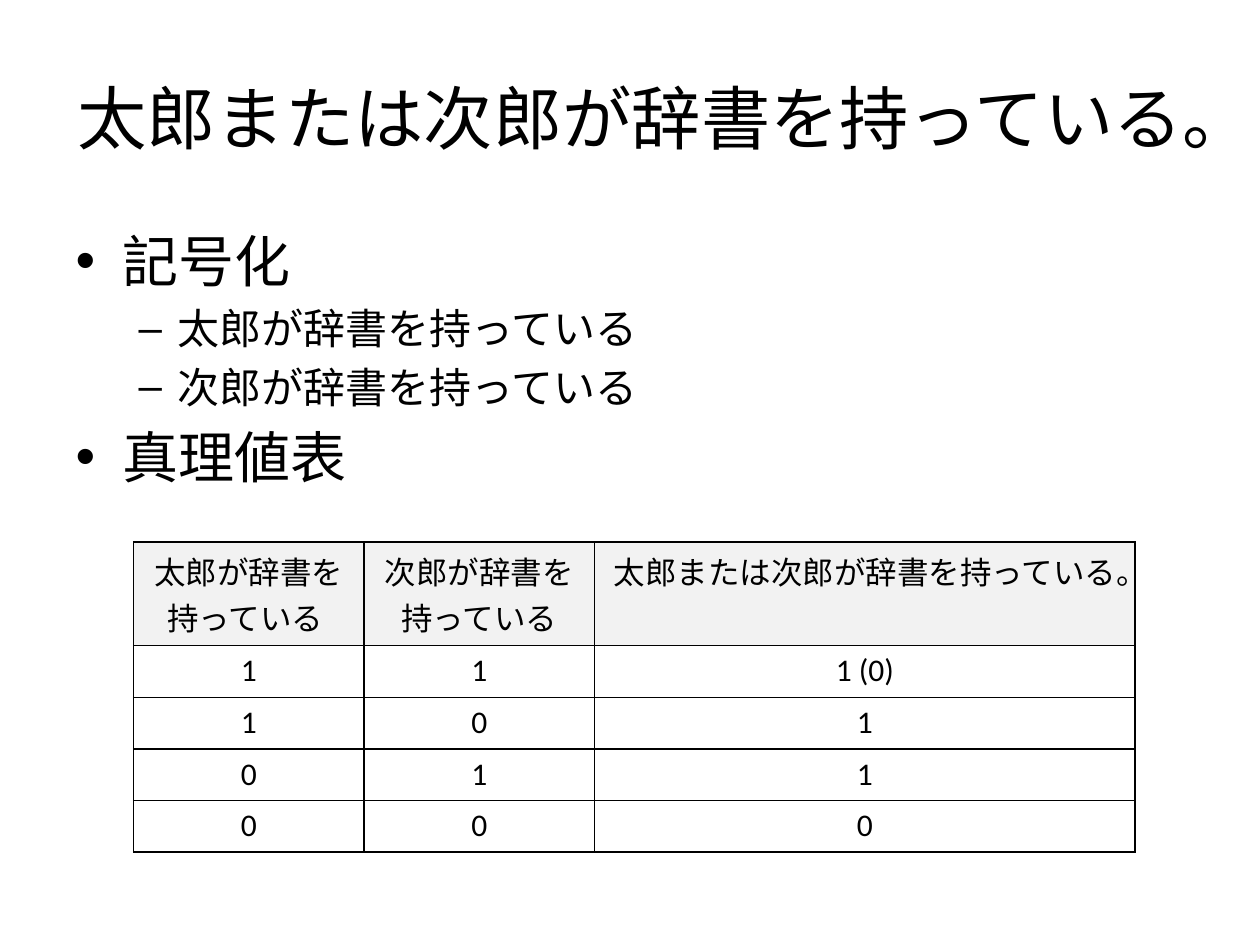
from lxml.etree import SubElement
from pptx import Presentation
from pptx.dml.color import RGBColor
from pptx.enum.text import MSO_ANCHOR, PP_ALIGN
from pptx.oxml.ns import qn
from pptx.util import Inches, Pt

BLACK = RGBColor(0x00, 0x00, 0x00)
HEADER_GREY = RGBColor(0xF2, 0xF2, 0xF2)
FONT = "Calibri"

TOPIC = "太郎または次郎が辞書を持っている。"
TARO = "太郎が辞書を持っている"
JIRO = "次郎が辞書を持っている"
OUTLINE = [("記号化", 0), (TARO, 1), (JIRO, 1), ("真理値表", 0)]
LEVEL_SIZES = [32, 24]
TRUTH_TABLE = [
    (TARO + " ", JIRO, TOPIC),
    ("1", "1", "1 (0)"),
    ("1", "0", "1"),
    ("0", "1", "1"),
    ("0", "0", "0"),
]
COLUMN_WIDTHS = [1.83, 1.83, 4.29]
HEADER_HEIGHT, ROW_HEIGHT = 0.82, 0.41


def write(paragraph, text, size, align=None, level=0):
    """Put formatted text into a paragraph."""
    paragraph.level = level
    paragraph.alignment = align
    run = paragraph.add_run()
    run.text = text
    run.font.name = FONT
    run.font.size = Pt(size)
    run.font.color.rgb = BLACK


def place(shape, left, top, width, height):
    """Move a shape to a box given in inches."""
    shape.left, shape.top = Inches(left), Inches(top)
    shape.width, shape.height = Inches(width), Inches(height)


def add_title(slide, box):
    """Fill the title placeholder."""
    title = slide.shapes.title
    place(title, *box)
    title.text_frame.vertical_anchor = MSO_ANCHOR.MIDDLE
    write(title.text_frame.paragraphs[0], TOPIC, 39.6, PP_ALIGN.CENTER)


def add_outline(slide, box):
    """Fill the body placeholder with the two-level list."""
    body = slide.placeholders[1]
    place(body, *box)
    frame = body.text_frame
    for index, (item, level) in enumerate(OUTLINE):
        paragraph = frame.add_paragraph() if index else frame.paragraphs[0]
        write(paragraph, item, LEVEL_SIZES[level], level=level)


def style_cell(cell, fill=None):
    """Draw the cell's borders and set its fill."""
    properties = cell._tc.get_or_add_tcPr()
    for side in ("lnL", "lnR", "lnT", "lnB"):
        border = SubElement(properties, qn(f"a:{side}"), w=str(Pt(1)))
        solid = SubElement(border, qn("a:solidFill"))
        SubElement(solid, qn("a:srgbClr"), val=str(BLACK))
    if fill is None:
        cell.fill.background()
    else:
        cell.fill.solid()
        cell.fill.fore_color.rgb = fill


def add_truth_table(slide, left, top):
    """Add the truth table with its top left corner at the given place."""
    height = HEADER_HEIGHT + ROW_HEIGHT * (len(TRUTH_TABLE) - 1)
    table = slide.shapes.add_table(
        len(TRUTH_TABLE), len(COLUMN_WIDTHS), Inches(left), Inches(top),
        Inches(sum(COLUMN_WIDTHS)), Inches(height)).table
    table.horz_banding = False
    for column, width in zip(table.columns, COLUMN_WIDTHS):
        column.width = Inches(width)
    for index, (row, values) in enumerate(zip(table.rows, TRUTH_TABLE)):
        row.height = Inches(ROW_HEIGHT if index else HEADER_HEIGHT)
        for cell, value in zip(row.cells, values):
            style_cell(cell, None if index else HEADER_GREY)
            paragraph = cell.text_frame.paragraphs[0]
            write(paragraph, value, 18, PP_ALIGN.CENTER)
            paragraph.runs[0].font.bold = False


def main():
    """Build the slide and save it."""
    presentation = Presentation()
    presentation.slide_width = Inches(10)
    presentation.slide_height = Inches(7.5)
    slide = presentation.slides.add_slide(presentation.slide_layouts[1])
    add_title(slide, (0.5, 0.3, 9, 1.25))
    add_outline(slide, (0.5, 1.75, 9, 4.95))
    add_truth_table(slide, 1.06, 4.3)
    presentation.save("out.pptx")


if __name__ == "__main__":
    main()
